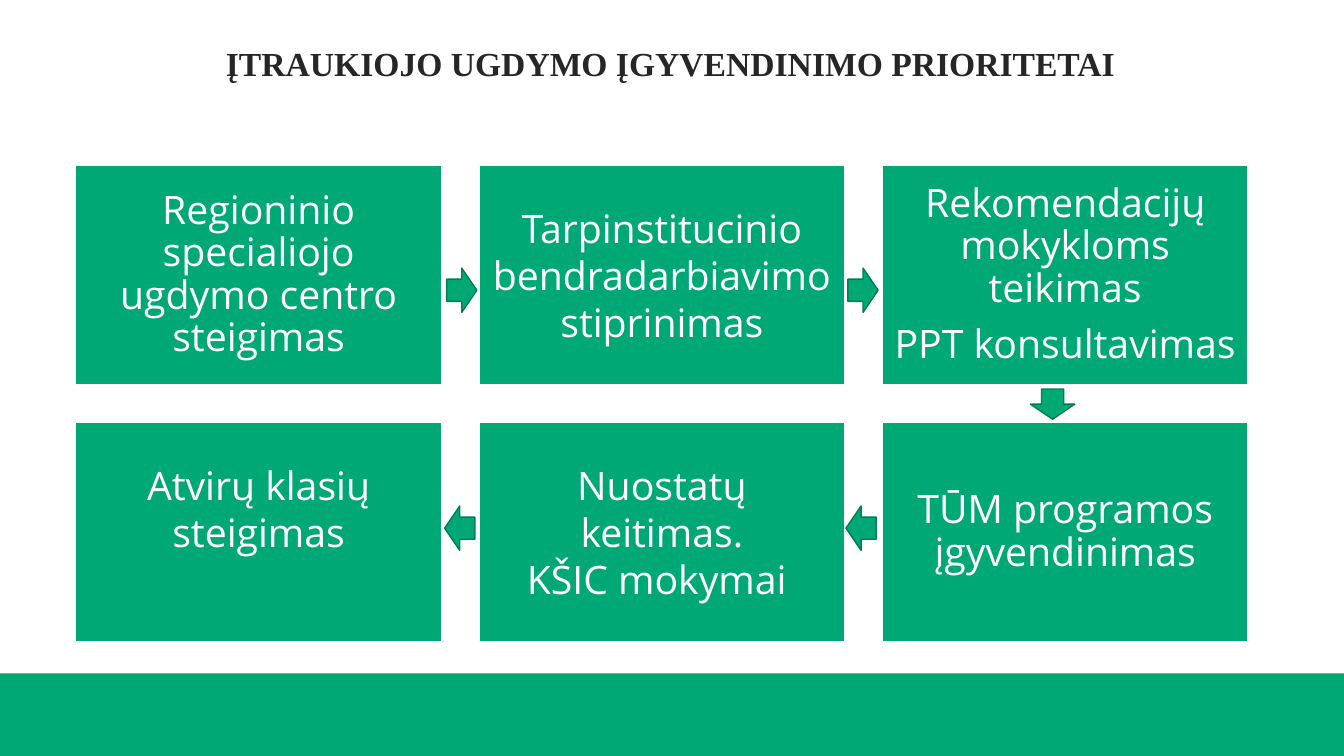
from dataclasses import dataclass

from pptx import Presentation
from pptx import util as u
from pptx.dml import color
from pptx.enum import shapes, text

PX = u.Inches(1) // 100  # one px is a hundredth of an inch


@dataclass(frozen=True)
class Theme:
    green: str = "00A875"
    dark_green: str = "007C57"
    white: str = "FFFFFF"
    ink: str = "262626"
    title_font: str = "Times New Roman"
    step_font: str = "Open Sans"
    title_size: int = 24
    step_size: int = 28
    paragraph_gap: float = 9.8


@dataclass(frozen=True)
class Step:
    column: int
    row: int
    lines: tuple[str, ...]
    spacing: float = 1.0
    gap: float = 0
    bottom_inset: int = 12


@dataclass(frozen=True)
class Arrow:
    left: int
    top: int
    rotation: int = 0


THEME = Theme()
PAGE_WIDTH, PAGE_HEIGHT = 1333, 750
GRID_LEFT, GRID_TOP = 75, 164
STEP_WIDTH, STEP_HEIGHT = 363, 218
COLUMN_PITCH, ROW_PITCH = 400, 255
ARROW_WIDTH, ARROW_HEIGHT = 30, 44

STEPS = (
    Step(0, 0, ("Regioninio specialiojo ugdymo centro steigimas",), 0.9),
    Step(1, 0, ("Tarpinstitucinio bendradarbiavimo stiprinimas",)),
    Step(2, 0, ("Rekomendacijų mokykloms teikimas", "PPT konsultavimas"),
         0.9, THEME.paragraph_gap),
    Step(2, 1, ("TŪM programos įgyvendinimas",), 0.9),
    Step(1, 1, ("Nuostatų keitimas.", "KŠIC mokymai ")),
    Step(0, 1, ("Atvirų klasių steigimas",), bottom_inset=59),
)
ARROWS = (
    Arrow(443, 266),
    Arrow(841, 266),
    Arrow(1029, 379, 90),
    Arrow(839, 502, 180),
    Arrow(441, 502, 180),
)


def rgb(value: str) -> color.RGBColor:
    return color.RGBColor.from_string(value)


def apply(target, values: dict) -> None:
    for name, value in values.items():
        setattr(target, name, value)


def add_box(page, kind, left: int, top: int, width: int, height: int,
            line: str | None = None):
    """Add a green shape, with a 1 pt outline if a line colour is given."""
    box = page.shapes.add_shape(kind, left * PX, top * PX, width * PX, height * PX)
    box.shadow.inherit = False
    box.fill.solid()
    box.fill.fore_color.rgb = rgb(THEME.green)
    if line:
        box.line.color.rgb = rgb(line)
        box.line.width = u.Pt(1)
    else:
        box.line.fill.background()
    return box


def write_para(para, words: str, spacing: float, font: dict, ink: str) -> None:
    apply(para, {"alignment": text.PP_ALIGN.CENTER, "line_spacing": spacing})
    span = para.add_run()
    span.text = words
    apply(span.font, font)
    span.font.color.rgb = rgb(ink)


def add_title(page, words: str) -> None:
    title = page.shapes.title
    apply(title, {"left": 60 * PX, "top": 0, "width": 1210 * PX, "height": 88 * PX})
    apply(title.text_frame, {"vertical_anchor": text.MSO_ANCHOR.BOTTOM,
                             "word_wrap": True,
                             "auto_size": text.MSO_AUTO_SIZE.NONE})
    font = {"name": THEME.title_font, "size": u.Pt(THEME.title_size), "bold": True}
    write_para(title.text_frame.paragraphs[0], words, 0.9, font, THEME.ink)


def add_step(page, step: Step) -> None:
    box = add_box(page, shapes.MSO_SHAPE.RECTANGLE,
                  GRID_LEFT + step.column * COLUMN_PITCH,
                  GRID_TOP + step.row * ROW_PITCH,
                  STEP_WIDTH, STEP_HEIGHT, THEME.white)
    frame = box.text_frame
    apply(frame, {"word_wrap": True, "vertical_anchor": text.MSO_ANCHOR.MIDDLE,
                  "margin_left": 12 * PX, "margin_right": 12 * PX,
                  "margin_top": 12 * PX, "margin_bottom": step.bottom_inset * PX})
    font = {"name": THEME.step_font, "size": u.Pt(THEME.step_size)}
    for index, words in enumerate(step.lines):
        para = frame.add_paragraph() if index else frame.paragraphs[0]
        if index:
            para.space_before = u.Pt(step.gap)
        write_para(para, words, step.spacing, font, THEME.white)


def add_arrow(page, arrow: Arrow) -> None:
    box = add_box(page, shapes.MSO_SHAPE.RIGHT_ARROW, arrow.left, arrow.top,
                  ARROW_WIDTH, ARROW_HEIGHT, THEME.dark_green)
    box.rotation = arrow.rotation


def main() -> None:
    deck = Presentation()
    apply(deck, {"slide_width": PAGE_WIDTH * PX, "slide_height": PAGE_HEIGHT * PX})
    page = deck.slides.add_slide(deck.slide_layouts.get_by_name("Title Only"))

    # Footer band and title
    add_box(page, shapes.MSO_SHAPE.RECTANGLE, 0, 668, PAGE_WIDTH, 82)
    add_title(page, "ĮTRAUKIOJO UGDYMO ĮGYVENDINIMO PRIORITETAI")

    # Priorities and the arrows between them
    for step in STEPS:
        add_step(page, step)
    for arrow in ARROWS:
        add_arrow(page, arrow)

    deck.save("out.pptx")


if __name__ == "__main__":
    main()
